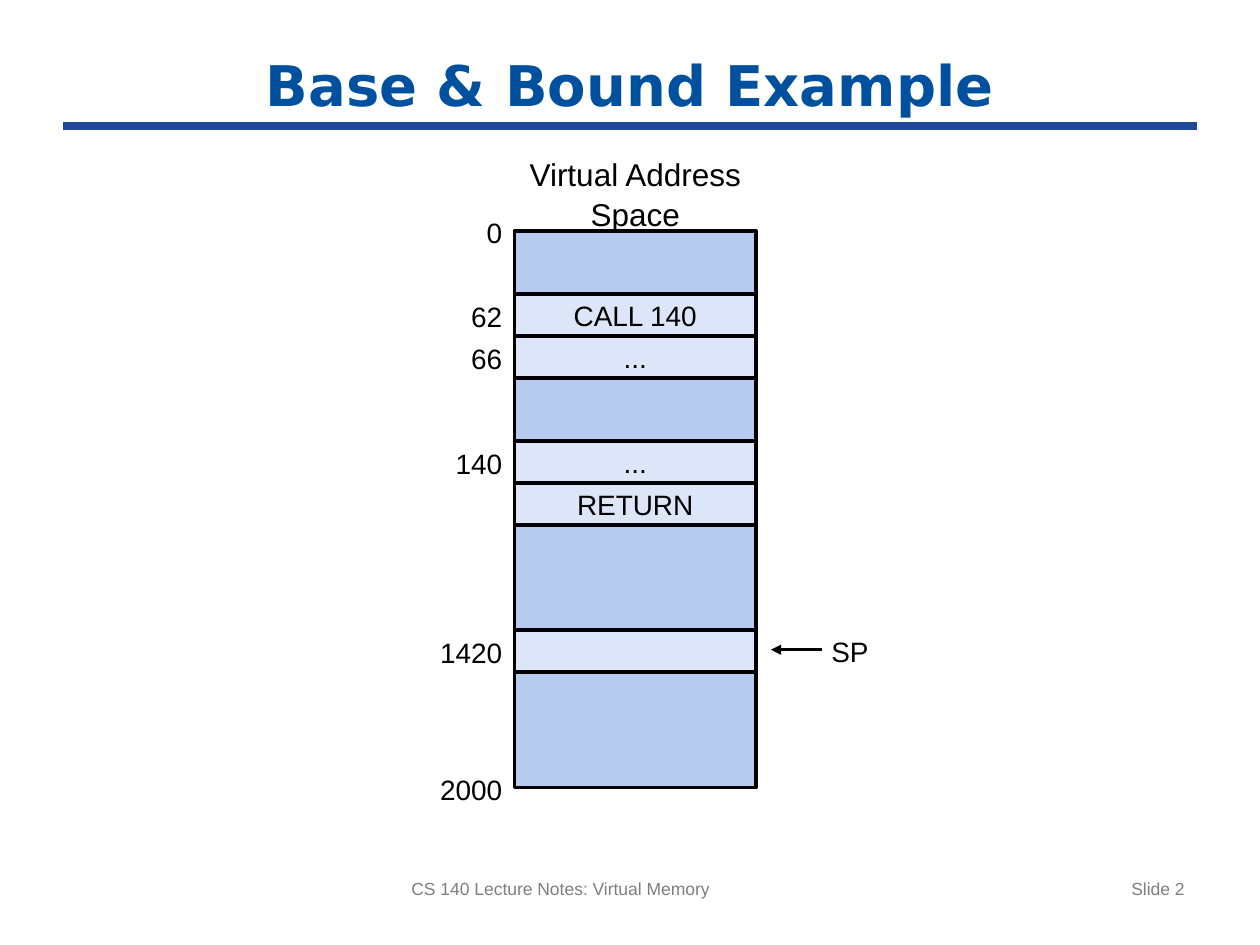
from dataclasses import dataclass

from lxml.etree import SubElement
from pptx import Presentation
from pptx.dml.color import RGBColor
from pptx.enum.shapes import MSO_CONNECTOR, MSO_SHAPE
from pptx.enum.text import MSO_ANCHOR, PP_ALIGN
from pptx.oxml.ns import qn
from pptx.util import Pt

BLACK = RGBColor(0x00, 0x00, 0x00)
GRAY = RGBColor(0x7F, 0x7F, 0x7F)
TITLE_BLUE = RGBColor(0x00, 0x50, 0xA0)
RULE_BLUE = RGBColor(0x1F, 0x48, 0x99)
MEMORY_BLUE = RGBColor(0xB7, 0xCB, 0xF0)
CELL_BLUE = RGBColor(0xDC, 0xE6, 0xF8)

MEMORY_LEFT, MEMORY_TOP = 294, 132
MEMORY_WIDTH, MEMORY_HEIGHT = 138, 318
CELL_HEIGHT = 24
LABEL_WIDTH, LABEL_HEIGHT = 54, 26.6


@dataclass(frozen=True)
class Cell:
    top: float
    text: str = ""


@dataclass(frozen=True)
class Address:
    text: str
    center: float


@dataclass(frozen=True)
class Caption:
    text: str
    left: float
    top: float
    width: float
    height: float
    size: float = 16
    color: RGBColor = BLACK
    alignment: PP_ALIGN = PP_ALIGN.LEFT
    spacing: float = 1.05


CELLS = [
    Cell(168, "CALL 140"),
    Cell(192, "..."),
    Cell(252, "..."),
    Cell(276, "RETURN"),
    Cell(360),
]
ADDRESSES = [
    Address("0", MEMORY_TOP),
    Address("62", 180),
    Address("66", 204),
    Address("140", 264),
    Address("1420", 372),
    Address("2000", MEMORY_TOP + MEMORY_HEIGHT),
]
CAPTIONS = [
    Caption("CS 140 Lecture Notes: Virtual Memory", 228, 498, 270, 31, 10, GRAY, spacing=1),
    Caption("Slide 2", 516, 498, 168, 31, 10, GRAY, PP_ALIGN.RIGHT, 1),
    Caption("Virtual Address\vSpace", 288, 84, 150, 51, 18, alignment=PP_ALIGN.CENTER),
    Caption("SP", 468, 358, LABEL_WIDTH, LABEL_HEIGHT),
]


def set_attributes(target, values: dict) -> None:
    for name, value in values.items():
        setattr(target, name, value)


def write_text(shape, text: str, size: float, color: RGBColor, alignment: PP_ALIGN,
               spacing: float = 1, font_name: str = "Arial", bold: bool = False) -> None:
    shape.text_frame.text = text
    paragraph = shape.text_frame.paragraphs[0]
    set_attributes(paragraph, {"alignment": alignment, "line_spacing": spacing})
    for run in paragraph.runs:
        set_attributes(run.font, {"name": font_name, "size": Pt(size), "bold": bold})
        run.font.color.rgb = color


def add_title(slide, text: str) -> None:
    title = slide.shapes.title
    set_attributes(title, {"left": Pt(36), "top": Pt(24), "width": Pt(648), "height": Pt(48)})
    write_text(title, text, 32, TITLE_BLUE, PP_ALIGN.CENTER, 1, "DejaVu Sans", True)
    set_attributes(title.text_frame, {"vertical_anchor": MSO_ANCHOR.MIDDLE, "word_wrap": True})


def add_caption(slide, caption: Caption) -> None:
    box = slide.shapes.add_textbox(
        Pt(caption.left), Pt(caption.top), Pt(caption.width), Pt(caption.height))
    box.text_frame.word_wrap = True
    write_text(box, caption.text, caption.size, caption.color, caption.alignment, caption.spacing)


def add_address(slide, address: Address) -> None:
    add_caption(slide, Caption(
        address.text, MEMORY_LEFT - LABEL_WIDTH, address.center - LABEL_HEIGHT / 2,
        LABEL_WIDTH, LABEL_HEIGHT, alignment=PP_ALIGN.RIGHT))


def add_block(slide, top: float, height: float, fill: RGBColor, text: str = "") -> None:
    block = slide.shapes.add_shape(
        MSO_SHAPE.RECTANGLE, Pt(MEMORY_LEFT), Pt(top), Pt(MEMORY_WIDTH), Pt(height))
    block.shadow.inherit = False
    block.fill.solid()
    block.fill.fore_color.rgb = fill
    block.line.color.rgb = BLACK
    block.line.width = Pt(2)
    if text:
        write_text(block, text, 16, BLACK, PP_ALIGN.CENTER)
        block.text_frame.vertical_anchor = MSO_ANCHOR.MIDDLE


def add_line(slide, start: float, end: float, height: float, color: RGBColor,
             weight: float, arrow: bool = False) -> None:
    line = slide.shapes.add_connector(
        MSO_CONNECTOR.STRAIGHT, Pt(start), Pt(height), Pt(end), Pt(height))
    line.line.color.rgb = color
    line.line.width = Pt(weight)
    if arrow:
        SubElement(line.line._get_or_add_ln(), qn("a:tailEnd"), type="triangle")
    SubElement(line._element.spPr, qn("a:effectLst"))


def main() -> None:
    presentation = Presentation()
    set_attributes(presentation, {"slide_width": Pt(720), "slide_height": Pt(540)})
    slide = presentation.slides.add_slide(presentation.slide_layouts[5])
    add_line(slide, 36, 684, 72, RULE_BLUE, 4.5)
    add_title(slide, "Base & Bound Example")
    add_block(slide, MEMORY_TOP, MEMORY_HEIGHT, MEMORY_BLUE)
    for cell in CELLS:
        add_block(slide, cell.top, CELL_HEIGHT, CELL_BLUE, cell.text)
    for address in ADDRESSES:
        add_address(slide, address)
    for caption in CAPTIONS:
        add_caption(slide, caption)
    add_line(slide, 470, 440.5, 371.3, BLACK, 1.5, arrow=True)
    presentation.save("out.pptx")


if __name__ == "__main__":
    main()
